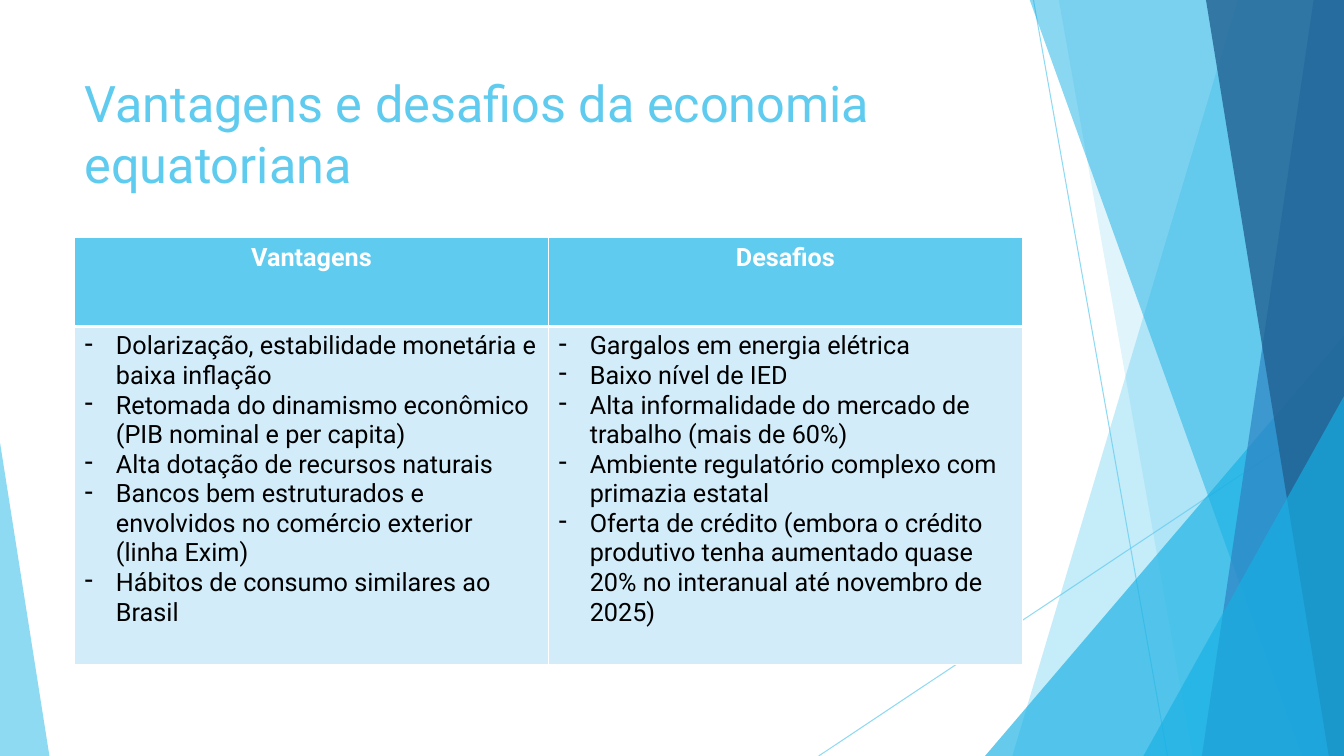
from typing import NamedTuple

from lxml import etree
from pptx import Presentation
from pptx.dml.color import RGBColor
from pptx.enum.shapes import MSO_CONNECTOR, MSO_SHAPE
from pptx.enum.text import MSO_ANCHOR, PP_ALIGN
from pptx.oxml.ns import qn
from pptx.util import Inches, Pt

STRAIGHT = MSO_CONNECTOR.STRAIGHT
TRIANGLE = MSO_SHAPE.ISOSCELES_TRIANGLE
TOP = MSO_ANCHOR.TOP
LEFT, CENTER = PP_ALIGN.LEFT, PP_ALIGN.CENTER

SKY = RGBColor(0x5F, 0xCB, 0xEF)
CYAN = RGBColor(0x17, 0xB0, 0xE4)
BLUE = RGBColor(0x2E, 0x83, 0xC3)
NAVY = RGBColor(0x22, 0x62, 0x92)
PALE = RGBColor(0xD2, 0xEC, 0xF9)
WHITE = RGBColor(0xFF, 0xFF, 0xFF)
BLACK = RGBColor(0x00, 0x00, 0x00)

FONT = "Roboto"
WIDTH, HEIGHT, BLEED = 13.33, 7.5, -0.01


class Ray(NamedTuple):
    start: tuple[float, float]
    end: tuple[float, float]


class Band(NamedTuple):
    """Area between a slanted left edge and the right side of the slide."""
    top_x: float
    bottom_x: float
    color: RGBColor
    alpha: int


class Wedge(NamedTuple):
    """Triangle standing on the bottom of the slide."""
    left: float
    top: float
    width: float
    apex: float
    color: RGBColor
    alpha: int


class Column(NamedTuple):
    heading: str
    items: list[str]


DECORATION = [
    Ray((10.25, 0), (11.58, HEIGHT)),
    Ray((WIDTH, 4.03), (8.12, HEIGHT)),
    Band(12.28, 10.04, SKY, 36),
    Band(10.5, 11.83, SKY, 20),
    Wedge(9.77, 3.33, 3.56, 1, CYAN, 66),
    Band(10.21, 12.91, CYAN, 50),
    Band(13.03, 11.92, BLUE, 70),
    Band(11.96, 13.18, NAVY, 80),
    Wedge(11.34, 3.93, 1.99, 1, CYAN, 66),
    Wedge(0, 4.39, 0.49, 0, SKY, 70),
]

COLUMNS = [
    Column("Vantagens", [
        "Dolarização, estabilidade monetária e baixa inflação",
        "Retomada do dinamismo econômico (PIB nominal e per capita)",
        "Alta dotação de recursos naturais",
        "Bancos bem estruturados e envolvidos no comércio exterior (linha Exim)",
        "Hábitos de consumo similares ao Brasil",
    ]),
    Column("Desafios", [
        "Gargalos em energia elétrica",
        "Baixo nível de IED",
        "Alta informalidade do mercado de trabalho (mais de 60%)",
        "Ambiente regulatório complexo com primazia estatal",
        "Oferta de crédito (embora o crédito produtivo tenha aumentado quase "
        "20% no interanual até novembro de 2025)",
    ]),
]


def set_alpha(shape, alpha: int) -> None:
    for color in shape._element.spPr.iter(qn("a:srgbClr")):
        etree.SubElement(color, qn("a:alpha"), val=str(alpha * 1000))


def paint(shape, color: RGBColor, alpha: int) -> None:
    shape.shadow.inherit = False
    shape.fill.solid()
    shape.fill.fore_color.rgb = color
    shape.line.fill.background()
    set_alpha(shape, alpha)


def draw_ray(s, ray: Ray) -> None:
    line = s.shapes.add_connector(
        STRAIGHT, *(Inches(v) for v in ray.start + ray.end))
    line.line.color.rgb = SKY
    line.line.width = Pt(0.75)
    set_alpha(line, 70)
    etree.SubElement(line._element.spPr, qn("a:effectLst"))


def draw_band(s, band: Band) -> None:
    builder = s.shapes.build_freeform(
        Inches(band.top_x), Inches(BLEED))
    corners = [(WIDTH, BLEED), (WIDTH, HEIGHT), (band.bottom_x, HEIGHT)]
    builder.add_line_segments([(Inches(x), Inches(y)) for x, y in corners])
    paint(builder.convert_to_shape(), band.color, band.alpha)


def draw_wedge(s, wedge: Wedge) -> None:
    sp = s.shapes.add_shape(
        TRIANGLE, Inches(wedge.left), Inches(wedge.top),
        Inches(wedge.width), Inches(HEIGHT - wedge.top))
    sp.adjustments[0] = wedge.apex
    paint(sp, wedge.color, wedge.alpha)


def write(p, text: str, *, size: float, color: RGBColor, bold: bool = False,
          align=LEFT, bullet: str = "") -> None:
    p.alignment = align
    if bullet:
        pPr = p._p.get_or_add_pPr()
        pPr.set("marL", str(Inches(0.31)))
        pPr.set("indent", str(Inches(-0.31)))
        etree.SubElement(pPr, qn("a:buFontTx"))
        etree.SubElement(pPr, qn("a:buChar"), char=bullet)
    r = p.add_run()
    r.text = text
    r.font.name = FONT
    r.font.size = Pt(size)
    r.font.bold = bold
    r.font.color.rgb = color


def style_cell(cell, fill: RGBColor, top: float, bottom: float) -> None:
    tcPr = cell._tc.get_or_add_tcPr()
    for side, width in zip("LRTB", (1, 1, top, bottom)):
        ln = etree.SubElement(tcPr, qn(f"a:ln{side}"), w=str(Pt(width)))
        solid = etree.SubElement(ln, qn("a:solidFill"))
        etree.SubElement(solid, qn("a:srgbClr"), val=str(WHITE))
    cell.fill.solid()
    cell.fill.fore_color.rgb = fill


def draw_table(s) -> None:
    table = s.shapes.add_table(
        2, len(COLUMNS), Inches(0.74), Inches(2.36),
        Inches(9.4), Inches(4.23)).table
    table.rows[0].height = Inches(0.88)
    table.rows[1].height = Inches(3.35)
    for i, column in enumerate(COLUMNS):
        table.columns[i].width = Inches(4.7)
        head, body = table.cell(0, i), table.cell(1, i)
        style_cell(head, SKY, top=1, bottom=3)
        style_cell(body, PALE, top=3, bottom=1)
        write(head.text_frame.paragraphs[0], column.heading,
              size=18, color=WHITE, bold=True, align=CENTER)
        tf = body.text_frame
        for n, item in enumerate(column.items):
            p = tf.add_paragraph() if n else tf.paragraphs[0]
            write(p, item, size=18, color=BLACK, bullet="-")


def main() -> None:
    prs = Presentation()
    prs.slide_width, prs.slide_height = Inches(WIDTH), Inches(HEIGHT)
    s = prs.slides.add_slide(prs.slide_layouts[6])

    # Background rays, bands and wedges
    draw = {Ray: draw_ray, Band: draw_band, Wedge: draw_wedge}
    for part in DECORATION:
        draw[type(part)](s, part)

    # Title
    tf = s.shapes.add_textbox(
        Inches(0.74), Inches(0.67), Inches(9.4), Inches(1.44)).text_frame
    tf.word_wrap = True
    tf.vertical_anchor = TOP
    write(tf.paragraphs[0], "Vantagens e desafios da economia equatoriana",
          size=36, color=SKY)

    # Comparison table
    draw_table(s)
    prs.save("out.pptx")


if __name__ == "__main__":
    main()
